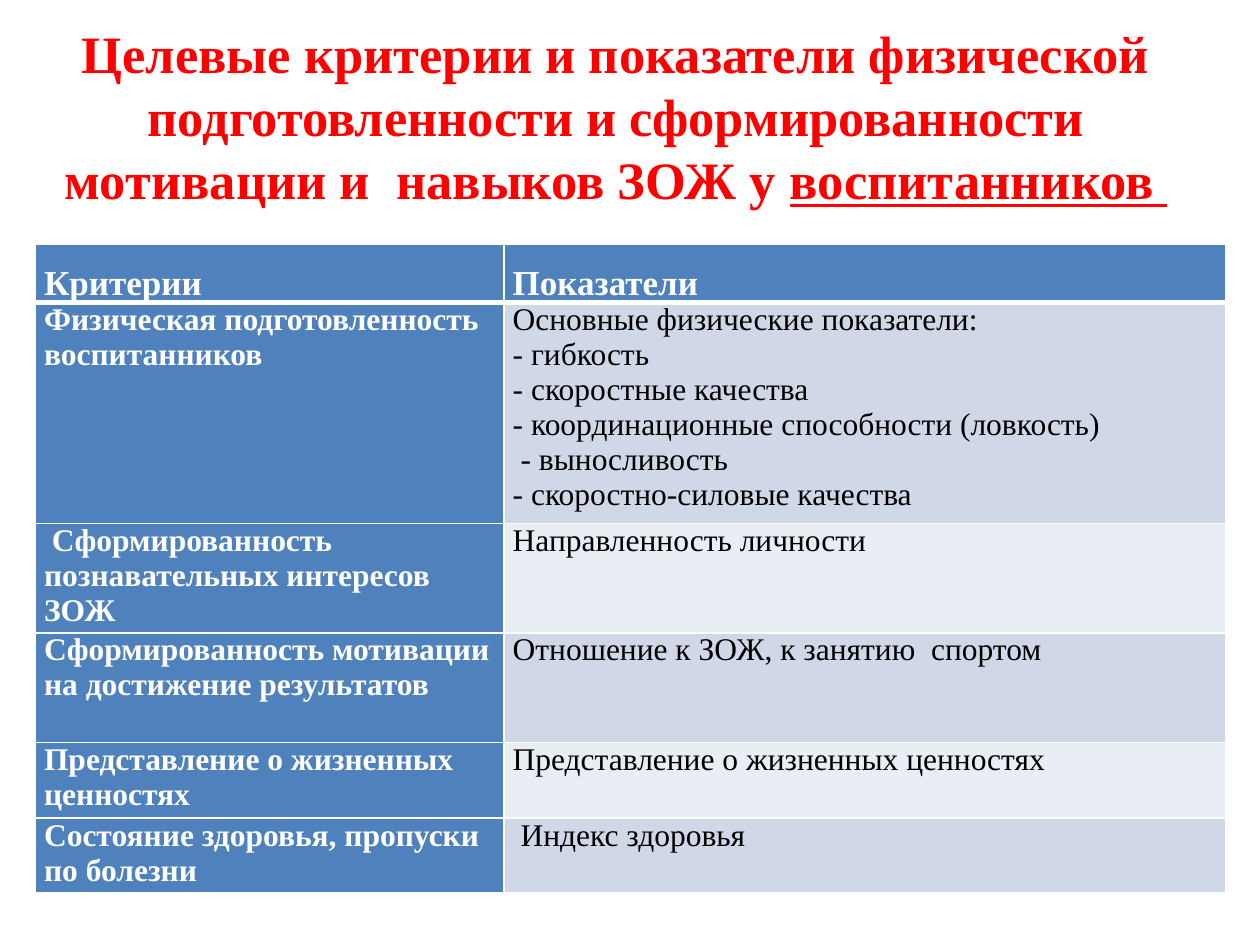
import pptx
import pptx.dml.color
import pptx.enum.text
import pptx.util
from lxml import etree
from pptx.oxml.ns import qn

Inches = pptx.util.Inches
Pt = pptx.util.Pt
ALIGN = pptx.enum.text.PP_ALIGN
ANCHOR = pptx.enum.text.MSO_ANCHOR

TITLE = [
    ("Целевые критерии и показатели физической подготовленности "
     "и сформированности мотивации и  навыков ЗОЖ у ", False),
    ("воспитанников ", True),
]
HEADS = ["Критерии", "Показатели"]
# criterion, indicators, alignment of indicators, row height
ROWS = [
    ("Физическая подготовленность воспитанников",
     ["Основные физические показатели:", "- гибкость",
      "- скоростные качества",
      "- координационные способности (ловкость)",
      " - выносливость", "- скоростно-силовые качества"],
     ALIGN.LEFT, 1.75),
    (" Сформированность познавательных интересов ЗОЖ",
     ["Направленность личности"], ALIGN.LEFT, 0.87),
    ("Сформированность мотивации на достижение результатов",
     ["Отношение к ЗОЖ, к занятию  спортом"], ALIGN.JUSTIFY, 0.87),
    ("Представление о жизненных ценностях",
     ["Представление о жизненных ценностях "], ALIGN.JUSTIFY, 0.6),
    ("Состояние здоровья, пропуски по болезни",
     [" Индекс здоровья"], ALIGN.JUSTIFY, 0.59),
]
COLS = [3.72, 5.73]
HEAD_H = 0.44
BLUE, WHITE, BLACK, RED = "4F81BD", "FFFFFF", "000000", "FF0000"
BANDS = ["D0D8E8", "E9EDF4"]
FACE = "Times New Roman"
HEAD = {"size": Pt(20), "bold": True, "name": FACE}
LABEL = {"size": Pt(18), "bold": True, "name": FACE}
BODY = {"size": Pt(18), "bold": False, "name": FACE}


def paint(target, color):
    """Set a solid fill, or the colour of a font."""
    fill = target.fill
    fill.solid()
    fill.fore_color.rgb = pptx.dml.color.RGBColor.from_string(color)


def style(font, form, color):
    for key, value in form.items():
        setattr(font, key, value)
    paint(font, color)


def edge(cell, sides):
    """Draw white borders; sides maps L, R, T, B to points."""
    props = cell._tc.get_or_add_tcPr()
    for side, width in sides.items():
        line = etree.SubElement(props, qn("a:ln" + side), w=str(Pt(width)))
        fill = etree.SubElement(line, qn("a:solidFill"))
        etree.SubElement(fill, qn("a:srgbClr"), val=WHITE)


def write(cell, lines, form, color, back, align=ALIGN.LEFT, space=1.0, top=1, base=1):
    edge(cell, {"L": 1, "R": 1, "T": top, "B": base})
    paint(cell, back)
    cell.margin_left = cell.margin_right = Inches(0.07)
    cell.margin_top = cell.margin_bottom = 0
    cell.text_frame.text = "\n".join(lines)
    for para in cell.text_frame.paragraphs:
        para.alignment = align
        para.line_spacing = space
        for run in para.runs:
            style(run.font, form, color)


def add_title(slide):
    title = slide.shapes.title
    title.left, title.top = Inches(-0.01), Inches(0.21)
    title.width, title.height = Inches(9.8), Inches(1.42)
    frame = title.text_frame
    frame.word_wrap = True
    frame.auto_size = pptx.enum.text.MSO_AUTO_SIZE.NONE
    frame.vertical_anchor = ANCHOR.MIDDLE
    para = frame.paragraphs[0]
    para.alignment = ALIGN.CENTER
    for text, under in TITLE:
        run = para.add_run()
        run.text = text
        form = {"size": Pt(30), "bold": True, "name": FACE, "underline": under}
        style(run.font, form, RED)


def add_grid(slide):
    heights = [HEAD_H] + [row[3] for row in ROWS]
    table = slide.shapes.add_table(
        len(heights), len(COLS), Inches(0.28), Inches(1.94),
        Inches(sum(COLS)), Inches(sum(heights))).table
    for col, width in zip(table.columns, COLS):
        col.width = Inches(width)
    for row, height in zip(table.rows, heights):
        row.height = Inches(height)
    for col, text in enumerate(HEADS):
        write(table.cell(0, col), [text], HEAD, WHITE, BLUE,
              ALIGN.JUSTIFY, 1.5, base=3)
    for num, (label, lines, align, _) in enumerate(ROWS, 1):
        top = 3 if num == 1 else 1
        write(table.cell(num, 0), [label], LABEL, WHITE, BLUE, top=top)
        write(table.cell(num, 1), lines, BODY, BLACK,
              BANDS[(num - 1) % 2], align, top=top)


def main():
    deck = pptx.Presentation()
    deck.slide_width, deck.slide_height = Inches(10), Inches(7.5)
    slide = deck.slides.add_slide(deck.slide_layouts[5])
    add_title(slide)
    add_grid(slide)
    deck.save("out.pptx")


if __name__ == "__main__":
    main()
